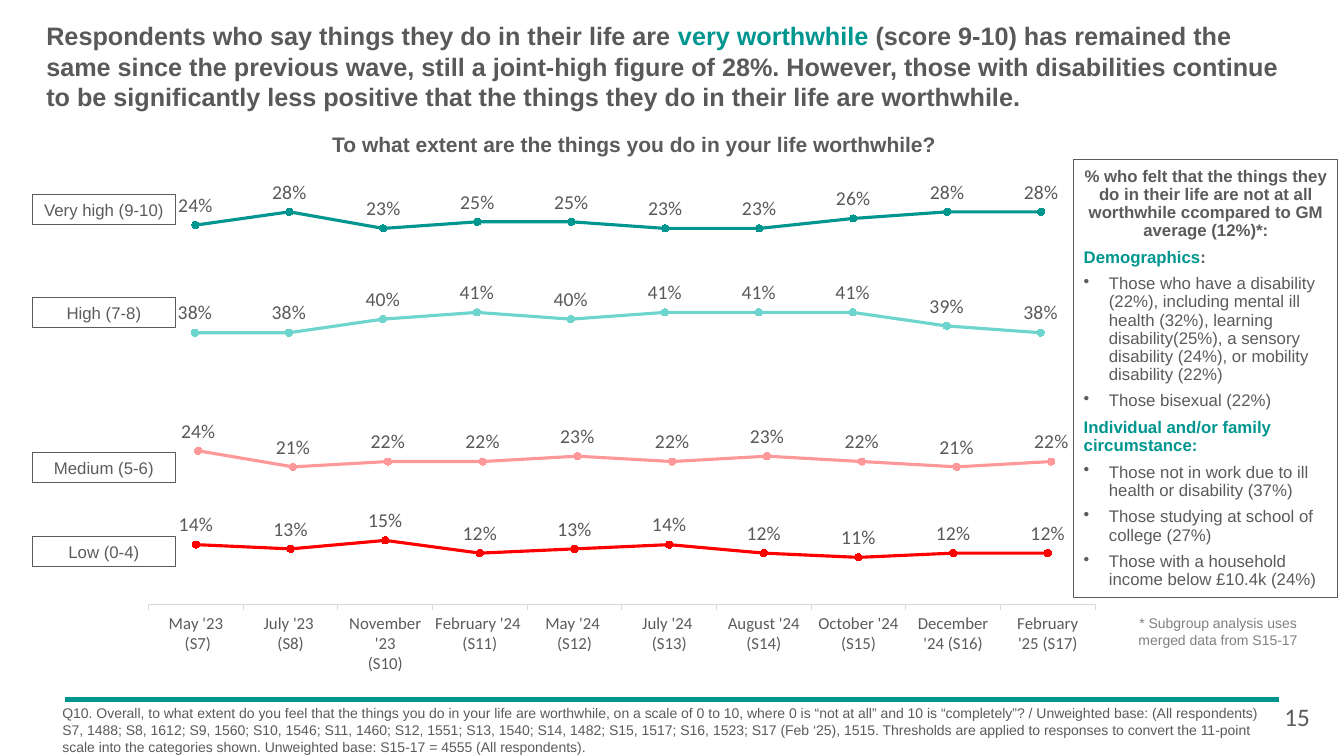
from dataclasses import dataclass
from typing import Any, NamedTuple, Optional

from lxml import etree
from pptx import Presentation
from pptx.chart.data import CategoryChartData
from pptx.dml.color import RGBColor
from pptx.enum.chart import (XL_CHART_TYPE, XL_LABEL_POSITION, XL_MARKER_STYLE,
                             XL_TICK_LABEL_POSITION, XL_TICK_MARK)
from pptx.enum.shapes import MSO_CONNECTOR, MSO_SHAPE
from pptx.enum.text import MSO_ANCHOR, PP_ALIGN
from pptx.oxml import parse_xml
from pptx.oxml.ns import qn
from pptx.util import Inches, Pt

CENTER, LEFT = PP_ALIGN.CENTER, PP_ALIGN.LEFT
TOP, MIDDLE = MSO_ANCHOR.TOP, MSO_ANCHOR.MIDDLE
LINE_CHART = XL_CHART_TYPE.LINE_MARKERS_STACKED
CIRCLE = XL_MARKER_STYLE.CIRCLE
ABOVE = XL_LABEL_POSITION.ABOVE
LABELS_LOW = XL_TICK_LABEL_POSITION.LOW
TICK_OUT, TICK_NONE = XL_TICK_MARK.OUTSIDE, XL_TICK_MARK.NONE
RECTANGLE = MSO_SHAPE.RECTANGLE
STRAIGHT = MSO_CONNECTOR.STRAIGHT

TEAL, GREY, DARK_GREY, AXIS_GREY = "009690", "5C5B5A", "595959", "D9D9D9"
CHART_NS = "http://schemas.openxmlformats.org/drawingml/2006/chart"

WAVES = ["May '23\n (S7)", "July '23 \n(S8)", "November '23\n(S10)", "February '24 \n(S11)",
         "May '24 \n(S12)", "July '24 \n(S13)", "August '24\n(S14)", "October '24\n(S15)",
         "December '24 (S16)", "February\n'25 (S17)"]


class Box(NamedTuple):
    left: float
    top: float
    width: float
    height: float


class Run(NamedTuple):
    text: str
    color: str = GREY
    bold: bool = False


@dataclass
class Para:
    runs: list[Run]
    align: Any = LEFT
    bullet: bool = False


@dataclass
class Band:
    """One line of percentages; plot holds fractions of the chart's frame."""
    color: str
    frame: Box
    plot: Box
    low: float
    high: float
    percents: list[int]
    shows_waves: bool = False


BANDS = [
    Band(TEAL, Box(0.61, 1.73, 12.51, 1.75), Box(0.069, 0.175, 0.745, 0.565), 0, 0.3,
         [24, 28, 23, 25, 25, 23, 23, 26, 28, 28]),
    Band("FF0000", Box(0.53, 4.74, 12.6, 2.28), Box(0.075, 0.254, 0.745, 0.296), 0, 0.16,
         [14, 13, 15, 12, 13, 14, 12, 11, 12, 12], True),
    Band("FF9999", Box(0.55, 3.75, 12.62, 1.75), Box(0.075, 0.398, 0.745, 0.152), 0.195, 0.245,
         [24, 21, 22, 22, 23, 22, 23, 22, 21, 22]),
    Band("6DD5CE", Box(0.53, 2.44, 12.51, 1.75), Box(0.075, 0.358, 0.745, 0.192), 0.365, 0.415,
         [38, 38, 40, 41, 40, 41, 41, 41, 39, 38]),
]
BAND_TAGS = [("Very high (9-10)", 1.93), ("High (7-8)", 2.95),
             ("Medium (5-6)", 4.49), ("Low (0-4)", 5.32)]


def bullet(text: str) -> Para:
    return Para([Run(text)], bullet=True)


SUBGROUPS = [
    Para([Run("% who felt that the things they do in their life are not at all worthwhile "
              "ccompared to GM average (12%)*:", bold=True)], CENTER),
    Para([Run("Demographics", TEAL, True), Run(":", GREY, True)]),
    bullet("Those who have a disability (22%), including mental ill health (32%), "
           "learning disability(25%), a sensory disability (24%), or mobility disability (22%)"),
    bullet("Those bisexual (22%)"),
    Para([Run("Individual and/or family circumstance:", TEAL, True)]),
    bullet("Those not in work due to ill health or disability (37%)"),
    bullet("Those studying at school of college (27%)"),
    bullet("Those with a household income below £10.4k (24%)"),
]
HEADLINE = [
    Run("Respondents who say things they do in their life are ", DARK_GREY, True),
    Run("very worthwhile ", TEAL, True),
    Run("(score 9-10) has remained the same since the previous wave, still a joint-high figure "
        "of 28%. However, those with disabilities continue to be significantly less positive "
        "that the things they do in their life are worthwhile.", DARK_GREY, True),
]
FOOTNOTE = (
    "Q10. Overall, to what extent do you feel that the things you do in your life are worthwhile, "
    "on a scale of 0 to 10, where 0 is “not at all” and 10 is “completely”? / Unweighted base: "
    "(All respondents) S7, 1488; S8, 1612; S9, 1560; S10, 1546; S11, 1460; S12, 1551; S13, 1540; "
    "S14, 1482; S15, 1517; S16, 1523; S17 (Feb ‘25), 1515. Thresholds are applied to responses to "
    "convert the 11-point scale into the categories shown. Unweighted base: S15-17 = 4555 "
    "(All respondents).")


def rgb(color: str) -> RGBColor:
    return RGBColor.from_string(color)


def apply(target: Any, values: dict[str, Any]) -> None:
    for name, value in values.items():
        setattr(target, name, value)


def set_font(font: Any, size: float, color: str, name: str = "Arial", bold: bool = False) -> None:
    apply(font, {"size": Pt(size), "name": name, "bold": bold})
    font.color.rgb = rgb(color)


def set_line(line: Any, color: str, width: float) -> None:
    line.color.rgb = rgb(color)
    line.width = Pt(width)


def inches(box: Box) -> list[int]:
    return [Inches(length) for length in box]


def write(shape: Any, paras: list[Para], size: float, font: str = "Arial", anchor: Any = TOP,
          inset: tuple[float, float] = (0.1, 0.05),
          spacing: Optional[dict[str, Any]] = None) -> None:
    frame = shape.text_frame
    side, end = map(Inches, inset)
    apply(frame, {"word_wrap": True, "vertical_anchor": anchor, "margin_left": side,
                  "margin_right": side, "margin_top": end, "margin_bottom": end})
    for index, para in enumerate(paras):
        line = frame.add_paragraph() if index else frame.paragraphs[0]
        apply(line, {"alignment": para.align, **(spacing or {})})
        if para.bullet:
            props = line._p.get_or_add_pPr()
            apply_indent = {"marL": Inches(0.25), "indent": -Inches(0.25)}
            for name, value in apply_indent.items():
                props.set(name, str(value))
            etree.SubElement(props, qn("a:buChar")).set("char", "•")
        for part in para.runs:
            run = line.add_run()
            run.text = part.text
            set_font(run.font, size, part.color, font, part.bold)


def add_text(slide: Any, box: Box, paras: list[Para], size: float, **options: Any) -> None:
    write(slide.shapes.add_textbox(*inches(box)), paras, size, **options)


def add_outlined(slide: Any, box: Box, paras: list[Para], **options: Any) -> None:
    shape = slide.shapes.add_shape(RECTANGLE, *inches(box))
    shape.shadow.inherit = False
    shape.fill.background()
    set_line(shape.line, GREY, 0.75)
    write(shape, paras, 12, anchor=MIDDLE, **options)


def place_plot(chart: Any, plot: Box) -> None:
    """Fix the inner plot area inside the chart's frame."""
    area = chart._chartSpace.find(f".//{{{CHART_NS}}}plotArea")
    for old in area.findall(f"{{{CHART_NS}}}layout"):
        area.remove(old)
    sizes = "".join(f'<c:{tag} val="{value}"/>' for tag, value in zip("xywh", plot))
    area.insert(0, parse_xml(
        f'<c:layout xmlns:c="{CHART_NS}"><c:manualLayout><c:layoutTarget val="inner"/>'
        f'<c:xMode val="edge"/><c:yMode val="edge"/>{sizes}</c:manualLayout></c:layout>'))


def add_band(slide: Any, band: Band) -> None:
    data = CategoryChartData(number_format="0%")
    data.categories = WAVES if band.shows_waves else [str(n + 1) for n in range(len(WAVES))]
    data.add_series("Series 1", [percent / 100 for percent in band.percents])
    chart = slide.shapes.add_chart(LINE_CHART, *inches(band.frame), data).chart
    apply(chart, {"has_legend": False, "has_title": False})
    set_font(chart.font, 12, "000000", "Calibri")
    place_plot(chart, band.plot)
    apply(chart.value_axis, {"minimum_scale": band.low, "maximum_scale": band.high,
                             "has_major_gridlines": False, "visible": False})
    waves = chart.category_axis
    apply(waves, {"visible": band.shows_waves, "major_tick_mark": TICK_OUT,
                  "minor_tick_mark": TICK_NONE, "tick_label_position": LABELS_LOW})
    if band.shows_waves:
        set_font(waves.tick_labels.font, 12, GREY, "Calibri")
        set_line(waves.format.line, AXIS_GREY, 0.75)
    plot = chart.plots[0]
    plot.vary_by_categories = False
    series = plot.series[0]
    series.smooth = False
    set_line(series.format.line, band.color, 2.25)
    apply(series.marker, {"style": CIRCLE, "size": 5})
    series.marker.format.fill.solid()
    series.marker.format.fill.fore_color.rgb = rgb(band.color)
    set_line(series.marker.format.line, band.color, 0.75)
    labels = series.data_labels
    apply(labels, {"show_value": True, "position": ABOVE, "number_format": "0%",
                   "number_format_is_linked": False})
    set_font(labels.font, 14, DARK_GREY, "Calibri")


def main() -> None:
    deck = Presentation()
    apply(deck, {"slide_width": Inches(13.33), "slide_height": Inches(7.5)})
    slide = deck.slides.add_slide(deck.slide_layouts[6])

    footer_rule = slide.shapes.add_connector(STRAIGHT, *inches(Box(0.64, 6.94, 12.69, 6.94)))
    set_line(footer_rule.line, TEAL, 3)
    etree.SubElement(footer_rule._element.spPr, qn("a:effectLst"))

    add_text(slide, Box(0.46, 0.2, 12.34, 0.91), [Para(HEADLINE)], 18, anchor=MIDDLE, inset=(0, 0))
    question = Run("To what extent are the things you do in your life worthwhile?", bold=True)
    add_text(slide, Box(2.67, 1.26, 7.24, 0.35), [Para([question], CENTER)], 15)
    for band in BANDS:
        add_band(slide, band)
    add_outlined(slide, Box(10.65, 1.58, 2.62, 4.35), SUBGROUPS, inset=(0.1, 0.1),
                 spacing={"line_spacing": 0.9, "space_before": Pt(3), "space_after": Pt(3)})
    merged_note = Run("* Subgroup analysis uses merged data from S15-17", "808080")
    add_text(slide, Box(11.03, 6.05, 2.1, 0.44), [Para([merged_note], CENTER)], 10)
    for tag, top in BAND_TAGS:
        add_outlined(slide, Box(0.32, top, 1.42, 0.3), [Para([Run(tag)], CENTER)])
    add_text(slide, Box(0.52, 6.94, 12.23, 0.56), [Para([Run(FOOTNOTE)])], 10)
    add_text(slide, Box(12.64, 6.91, 0.53, 0.4), [Para([Run("15")])], 18, font="Calibri")
    deck.save("out.pptx")


if __name__ == "__main__":
    main()
